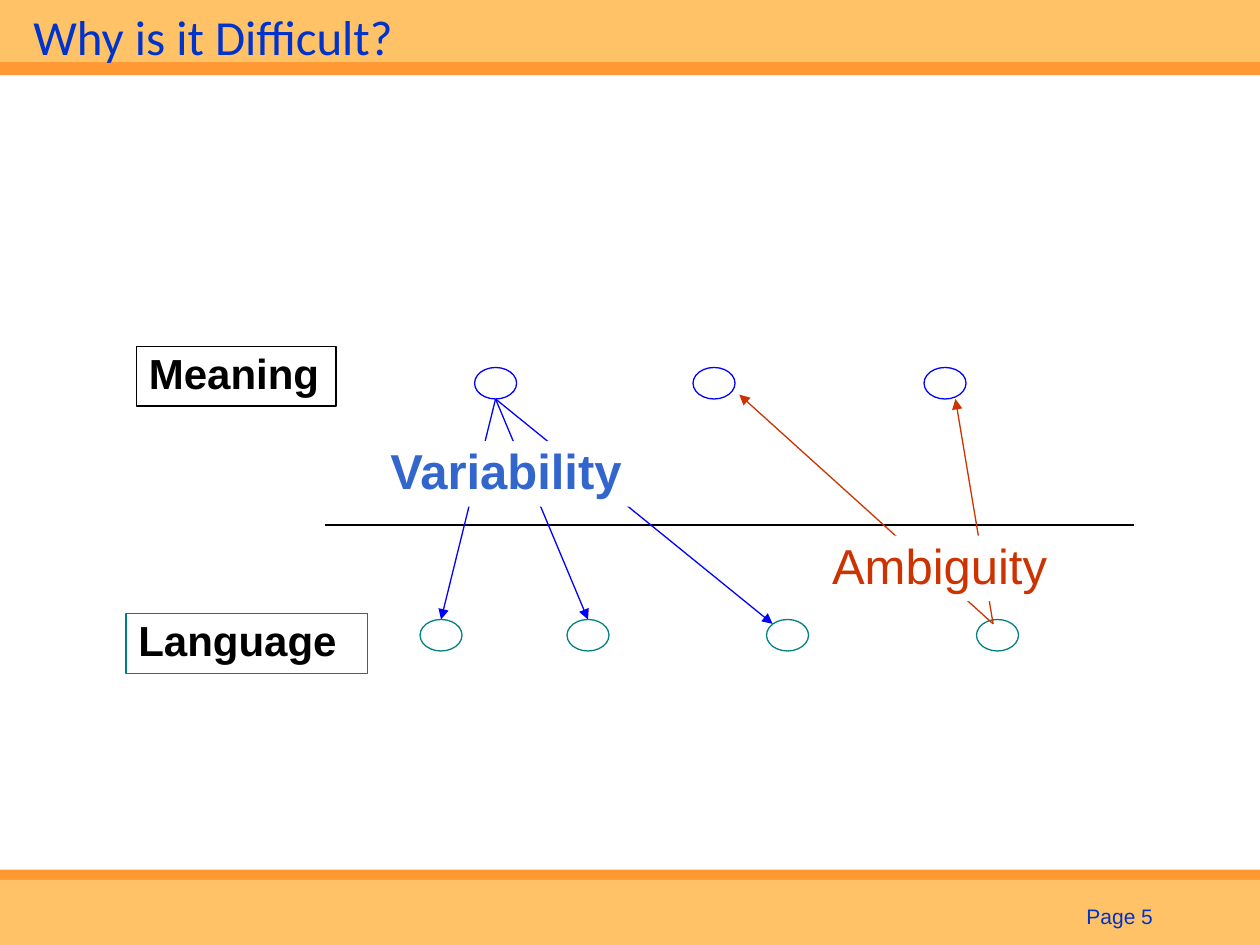
from lxml.etree import SubElement
from pptx import Presentation
from pptx.dml.color import RGBColor
from pptx.enum.shapes import MSO_CONNECTOR, MSO_SHAPE
from pptx.enum.text import MSO_ANCHOR, PP_ALIGN
from pptx.oxml.ns import qn
from pptx.util import Pt

COLORS = {
    "band": "FFC266", "edge": "FF9933", "title": "0033CC", "black": "000000",
    "white": "FFFFFF", "meaning": "0000FF", "language": "008080",
    "ambiguity": "CC3300", "variability": "3366CC",
}

deck = Presentation()
deck.slide_width, deck.slide_height = Pt(720), Pt(540)
page = deck.slides.add_slide(deck.slide_layouts[6])


def add_box(kind, bounds, fill=None, line=None, text="", size=24, color="black",
            bold=False, font="Arial", align=PP_ALIGN.LEFT, anchor=MSO_ANCHOR.TOP,
            spacing=1.0, side_inset=7.2, wrap=True):
    box = page.shapes.add_shape(kind, *map(Pt, bounds))
    box.shadow.inherit = False
    if fill:
        box.fill.solid()
        box.fill.fore_color.rgb = RGBColor.from_string(COLORS[fill])
    else:
        box.fill.background()
    if line:
        box.line.color.rgb = RGBColor.from_string(COLORS[line])
        box.line.width = Pt(0.75)
    else:
        box.line.fill.background()
    if text:
        frame = box.text_frame
        frame.text = text
        frame.word_wrap = wrap
        frame.vertical_anchor = anchor
        frame.margin_left = frame.margin_right = Pt(side_inset)
        para = frame.paragraphs[0]
        para.alignment = align
        para.line_spacing = spacing
        span = para.runs[0]
        span.font.name, span.font.size, span.font.bold = font, Pt(size), bold
        span.font.color.rgb = RGBColor.from_string(COLORS[color])


def add_line(start, end, color, arrow=True):
    line = page.shapes.add_connector(MSO_CONNECTOR.STRAIGHT, *map(Pt, start + end))
    line.line.color.rgb = RGBColor.from_string(COLORS[color])
    line.line.width = Pt(0.75)
    if arrow:
        SubElement(line.line._get_or_add_ln(), qn("a:tailEnd"), type="triangle")
    SubElement(line._element.spPr, qn("a:effectLst"))


for top, height, fill in [(497, 43, "edge"), (0, 43, "edge"),
                          (0, 35.5, "band"), (502.8, 37.2, "band")]:
    add_box(MSO_SHAPE.RECTANGLE, (0, top, 720, height), fill)

add_box(MSO_SHAPE.RECTANGLE, (12, -0.5, 648, 42), text="Why is it Difficult?",
        size=28, color="title", font="Calibri", anchor=MSO_ANCHOR.MIDDLE)

add_line((186, 300), (648, 300), "black", arrow=False)

for text, bounds, line in [("Meaning", (78, 198, 114, 34), "black"),
                           ("Language", (72, 350.75, 138, 34), "language")]:
    add_box(MSO_SHAPE.RECTANGLE, bounds, line=line, text=text, bold=True, spacing=0.9)

for top, lefts, line in [(210, (271.2, 396, 528), "meaning"),
                         (354, (240, 324, 438, 558), "language")]:
    for left in lefts:
        add_box(MSO_SHAPE.OVAL, (left, top, 24, 18), line=line)

for end in [(422.5, 225.5), (546, 228)]:
    add_line((567.5, 356.5), end, "ambiguity")
add_box(MSO_SHAPE.RECTANGLE, (475.5, 306, 123, 37.5), "white", text="Ambiguity",
        size=28, color="ambiguity", spacing=0.9, side_inset=0, wrap=False)

for end in [(336, 354), (252, 354), (441.5, 356.5)]:
    add_line((283.2, 228), end, "meaning")
add_box(MSO_SHAPE.RECTANGLE, (216, 252, 198, 37.5), "white", text="Variability",
        size=28, color="variability", bold=True, spacing=0.9)

add_box(MSO_SHAPE.RECTANGLE, (594, 516, 72, 18), text="Page 5", size=12,
        color="title", align=PP_ALIGN.RIGHT, anchor=MSO_ANCHOR.BOTTOM)

deck.save("out.pptx")
